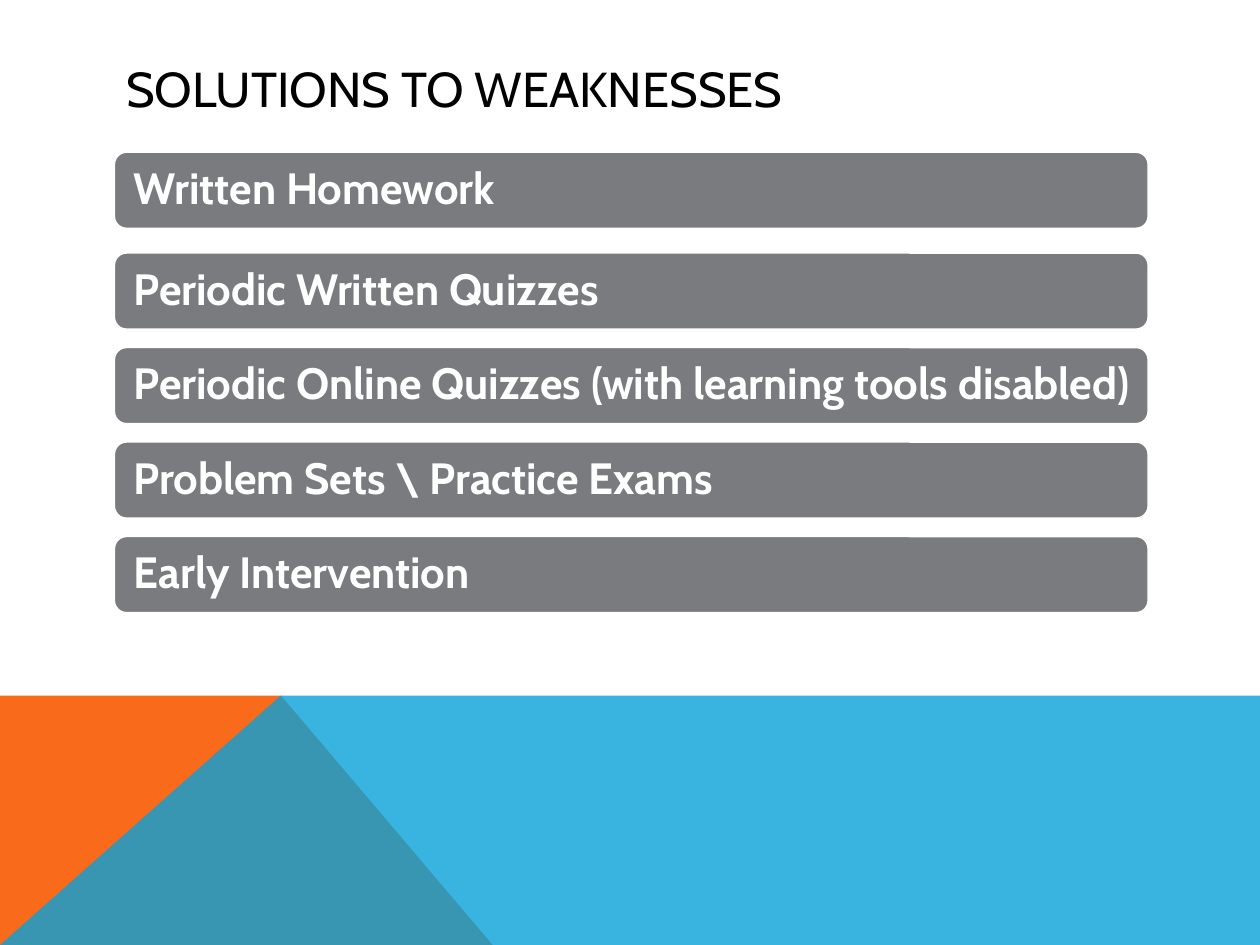
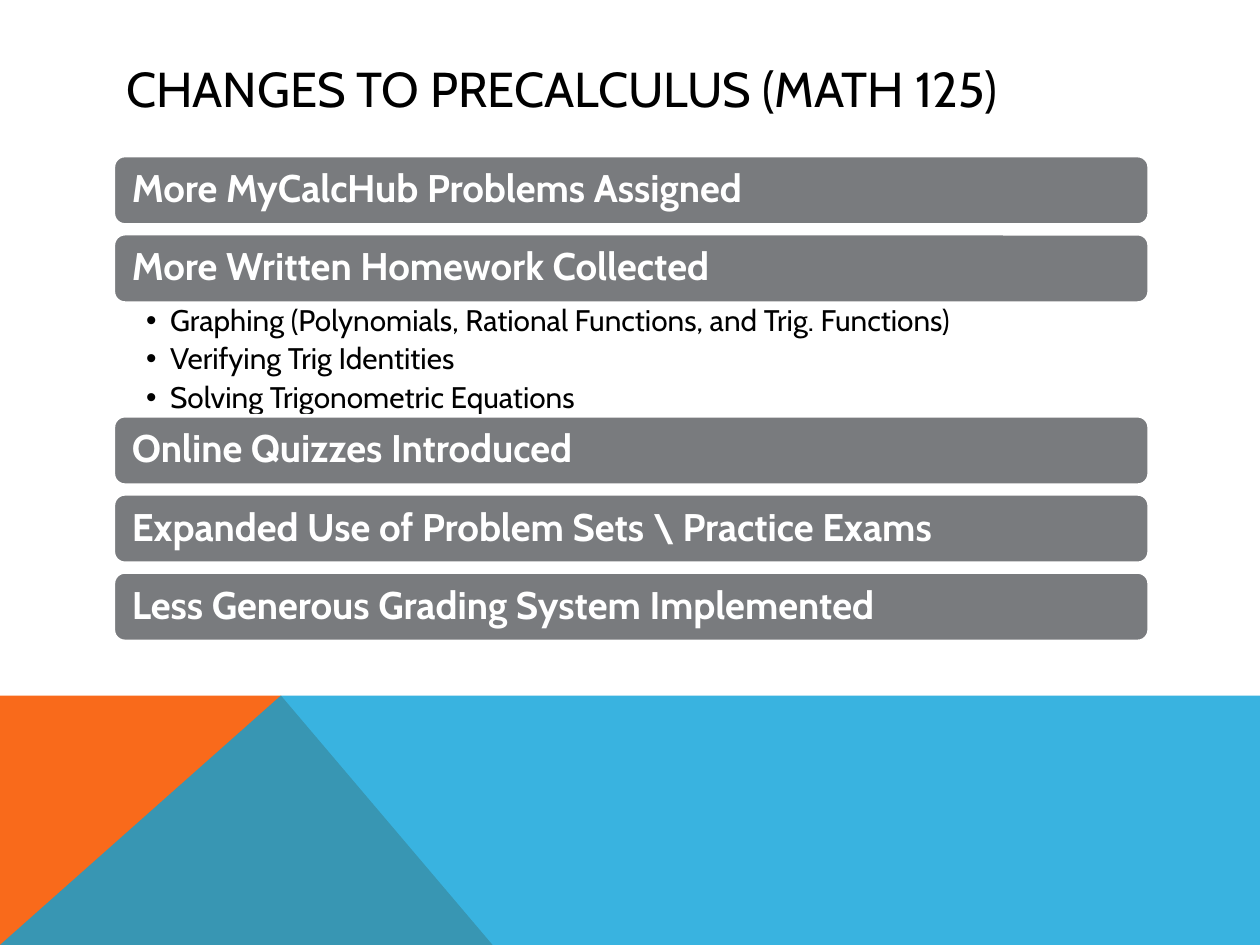
"""Builds two course slides of title, grey bars and a folded colour band."""
from lxml.etree import SubElement
from pptx import Presentation
from pptx.dml.color import RGBColor
from pptx.enum.shapes import MSO_SHAPE as Shape
from pptx.enum.text import MSO_ANCHOR as Anchor, MSO_AUTO_SIZE as AutoSize, PP_ALIGN as Align
from pptx.oxml.ns import qn
from pptx.util import Emu, Inches, Pt

ORANGE = RGBColor(0xF9, 0x6A, 0x1B)
BLUE = RGBColor(0x08, 0xA1, 0xD9)
GREY = RGBColor(0x79, 0x7B, 0x7E)
WHITE = RGBColor(0xFF, 0xFF, 0xFF)
BLACK = RGBColor(0x00, 0x00, 0x00)

FONT = "Cabin"
COLUMNS, ROWS = 100, 75
LEFT, WIDTH = 9, 82.2
BAND_TOP = 55.2
PEAK = 22.3
TITLE_ONLY, TITLE_AND_BODY = 5, 1


def apply(target, **values):
    """Set each named attribute on the target."""
    for name, value in values.items():
        setattr(target, name, value)


class SlideBuilder:
    """Holds the deck style and the current slide."""

    def __init__(self):
        self.deck = Presentation()
        apply(self.deck, slide_width=Inches(10), slide_height=Inches(7.5))
        self.page = None

    def x(self, columns):
        return Emu(round(self.deck.slide_width * columns / COLUMNS))

    def y(self, rows):
        return Emu(round(self.deck.slide_height * rows / ROWS))

    def place(self, box, top, height):
        apply(box, left=self.x(LEFT), top=self.y(top),
              width=self.x(WIDTH), height=self.y(height))

    def add_page(self, layout, title):
        """Start a slide and format its title."""
        self.page = self.deck.slides.add_slide(self.deck.slide_layouts[layout])
        box = self.page.shapes.title
        self.place(box, 4, 6)
        self.set_text(box, [title], 28, BLACK, vertical_anchor=Anchor.MIDDLE)

    def set_text(self, box, lines, size, color, bold=False, spacing=1.0, after=0, **frame_values):
        """Fill a box with one paragraph per line."""
        frame = box.text_frame
        frame.text = "\n".join(lines)
        apply(frame, word_wrap=True, auto_size=AutoSize.NONE, **frame_values)
        for para in frame.paragraphs:
            apply(para, alignment=Align.LEFT, line_spacing=spacing,
                  space_before=Pt(0), space_after=Pt(round(size * after, 1)))
            for span in para.runs:
                apply(span.font, name=FONT, size=Pt(size), bold=bold)
                span.font.color.rgb = color

    def add_bar(self, text, top, height, size, inset):
        """Draw a grey rounded bar with a bold label."""
        bar = self.page.shapes.add_shape(Shape.ROUNDED_RECTANGLE, 0, 0, 0, 0)
        self.place(bar, top, height)
        bar.shadow.inherit = False
        bar.fill.solid()
        bar.fill.fore_color.rgb = GREY
        bar.line.color.rgb = WHITE
        bar.line.width = Pt(2)
        self.set_text(bar, [text], size, WHITE, bold=True, spacing=0.9, after=0.35,
                      vertical_anchor=Anchor.MIDDLE,
                      margin_left=Inches(inset), margin_right=Inches(0.05))

    def add_bars(self, labels, top, step, **style):
        """Stack bars at an equal step."""
        for index, label in enumerate(labels):
            self.add_bar(label, top + index * step, **style)

    def add_list(self, lines, top, height):
        """Place a bulleted list in the body placeholder."""
        box = self.page.placeholders[1]
        self.place(box, top, height)
        self.set_text(box, lines, 17, BLACK, spacing=0.9, after=0.2,
                      vertical_anchor=Anchor.TOP,
                      margin_left=Inches(0.26), margin_right=Inches(0.17),
                      margin_top=Inches(0.03), margin_bottom=Inches(0.03))
        indent = Inches(0.19)
        for para in box.text_frame.paragraphs:
            para.level = 1
            marks = para._p.get_or_add_pPr()
            marks.set("marL", str(indent))
            marks.set("indent", str(-indent))
            SubElement(marks, qn("a:buChar")).set("char", "•")

    def add_master_band(self, points, color, order, opacity=100):
        """Draw a flat polygon and move it behind everything on the master."""
        corners = [(self.x(column), self.y(row)) for column, row in points]
        builder = self.page.shapes.build_freeform(*corners[0], scale=1.0)
        builder.add_line_segments(corners[1:], close=True)
        band = builder.convert_to_shape()
        band.shadow.inherit = False
        band.fill.solid()
        band.fill.fore_color.rgb = color
        band.line.fill.background()
        tint = band.element.find(".//" + qn("a:srgbClr"))
        SubElement(tint, qn("a:alpha")).set("val", str(opacity * 1000))
        self.deck.slide_master.shapes.element.insert(2 + order, band.element)


def main():
    """Build both slides and save the deck."""
    slides = SlideBuilder()

    slides.add_page(TITLE_ONLY, "SOLUTIONS TO WEAKNESSES")
    slides.add_master_band([(0, ROWS), (0, BAND_TOP), (PEAK, BAND_TOP), (39.1, ROWS)], ORANGE, 0)
    slides.add_master_band([(0, ROWS), (PEAK, BAND_TOP), (COLUMNS, BAND_TOP), (COLUMNS, ROWS)],
                           BLUE, 1, opacity=80)
    large = {"height": 6.2, "size": 25, "inset": 0.13}
    slides.add_bar("Written Homework", 12, **large)
    slides.add_bars(["Periodic Written Quizzes",
                     "Periodic Online Quizzes (with learning tools disabled)",
                     "Problem Sets \\ Practice Exams",
                     "Early Intervention"], 20, 7.5, **large)

    slides.add_page(TITLE_AND_BODY, "CHANGES TO PRECALCULUS (MATH 125)")
    small = {"step": 6.2, "height": 5.5, "size": 22, "inset": 0.12}
    slides.add_bars(["More MyCalcHub Problems Assigned",
                     "More Written Homework Collected"], 12.35, **small)
    slides.add_list(["Graphing (Polynomials, Rational Functions, and Trig. Functions)",
                     "Verifying Trig Identities",
                     "Solving Trigonometric Equations"], 24, 9)
    slides.add_bars(["Online Quizzes Introduced",
                     "Expanded Use of Problem Sets \\ Practice Exams",
                     "Less Generous Grading System Implemented"], 33, **small)

    slides.deck.save("out.pptx")


if __name__ == "__main__":
    main()
